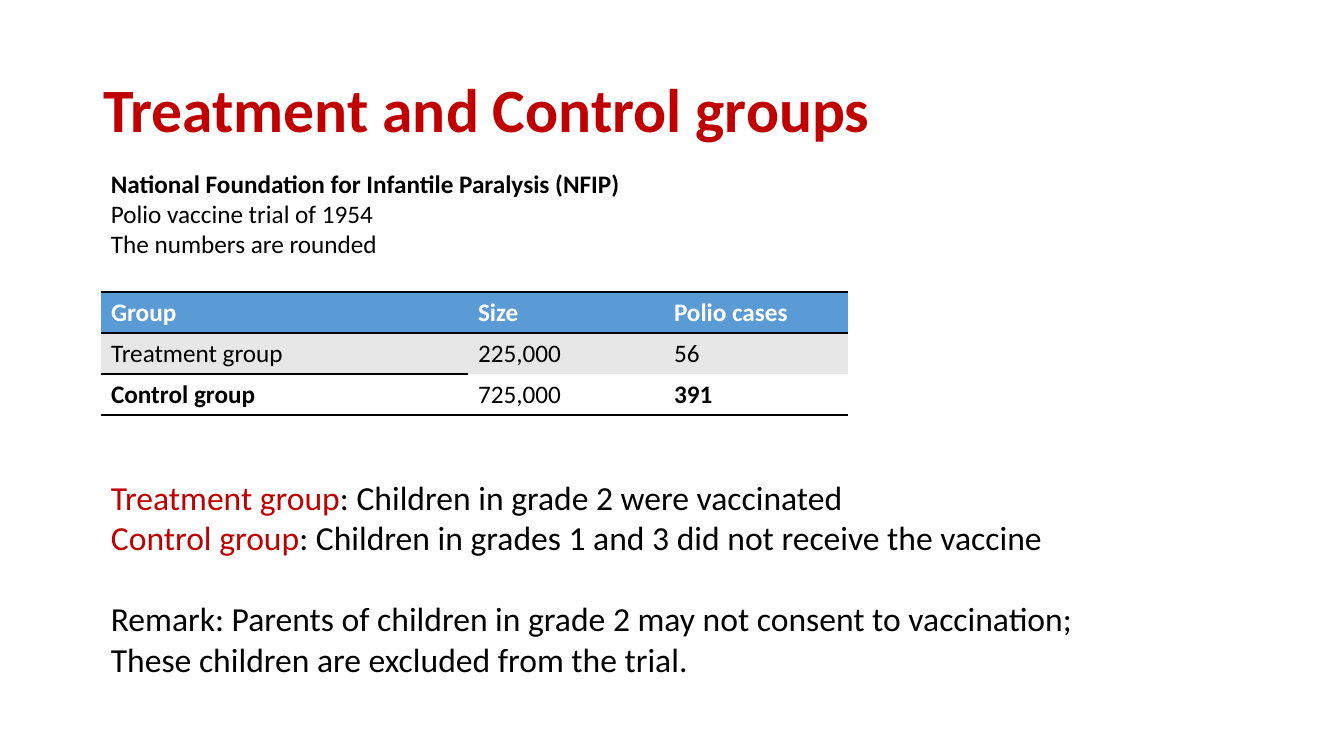
from lxml.etree import SubElement
from pptx import Presentation
from pptx.dml.color import RGBColor
from pptx.enum.text import MSO_ANCHOR, PP_ALIGN
from pptx.oxml.ns import qn
from pptx.util import Emu, Pt

RED = RGBColor(0xC0, 0x00, 0x00)
BLACK = RGBColor(0x00, 0x00, 0x00)
WHITE = RGBColor(0xFF, 0xFF, 0xFF)
BLUE = RGBColor(0x5B, 0x9B, 0xD5)
GREY = RGBColor(0xE7, 0xE7, 0xE7)

EMU_PER_PX = 914400 / 100.8
TITLE_ONLY = 5
LEFT = 101

ROWS = [
    ["Group", "Size", "Polio cases"],
    ["Treatment group", "225,000", "56"],
    ["Control group", "725,000", "391"],
]
ROW_STYLES = [(BLUE, WHITE), (GREY, BLACK), (WHITE, BLACK)]
BOLD_CELLS = {(0, 0), (0, 1), (0, 2), (2, 0), (2, 2)}
# Widths in points of the horizontal rules above, between and below the rows
RULES = [[2, 2, 2], [1, 2, 2], [1, 0, 0], [2, 2, 2]]


def px(length):
    return Emu(round(length * EMU_PER_PX))


def set_borders(cell, top, bottom):
    """Draw black rules above and below a cell; a width of 0 means none."""
    properties = cell._tc.get_or_add_tcPr()
    sides = [("a:lnL", 0), ("a:lnR", 0), ("a:lnT", top), ("a:lnB", bottom)]
    for index, (tag, width) in enumerate(sides):
        line = SubElement(properties, qn(tag), w=str(Pt(width)))
        if width:
            fill = SubElement(line, qn("a:solidFill"))
            SubElement(fill, qn("a:srgbClr"), val=str(BLACK))
        else:
            SubElement(line, qn("a:noFill"))
        properties.insert(index, line)  # borders must precede the fill


class SlideBuilder:
    font_name = "Calibri"

    def __init__(self, presentation):
        layout = presentation.slide_layouts[TITLE_ONLY]
        self.slide = presentation.slides.add_slide(layout)

    def style(self, paragraph, size, color=BLACK, bold=False):
        font = paragraph.font
        font.name, font.size, font.bold = self.font_name, Pt(size), bold
        font.color.rgb = color

    def title(self, text, left, top, width, height):
        shape = self.slide.shapes.title
        shape.left, shape.top = px(left), px(top)
        shape.width, shape.height = px(width), px(height)
        frame = shape.text_frame
        frame.text = text
        frame.vertical_anchor = MSO_ANCHOR.MIDDLE
        paragraph = frame.paragraphs[0]
        paragraph.alignment = PP_ALIGN.LEFT
        paragraph.line_spacing = 0.9
        self.style(paragraph, 44, RED, bold=True)

    def text(self, lines, size, left, top, width, height, wrap=True):
        """Add a text box and return its paragraphs, one per line."""
        box = self.slide.shapes.add_textbox(px(left), px(top), px(width), px(height))
        frame = box.text_frame
        frame.word_wrap = wrap
        frame.text = "\n".join(lines)
        for paragraph in frame.paragraphs:
            self.style(paragraph, size)
        return frame.paragraphs

    def table(self, left, top, column_widths, row_height):
        frame = self.slide.shapes.add_table(
            len(ROWS), len(column_widths), px(left), px(top),
            px(sum(column_widths)), px(row_height * len(ROWS)))
        table = frame.table
        table.horz_banding = False
        for column, width in zip(table.columns, column_widths):
            column.width = px(width)
        for i, (values, (fill, color)) in enumerate(zip(ROWS, ROW_STYLES)):
            table.rows[i].height = px(row_height)
            for j, value in enumerate(values):
                cell = table.cell(i, j)
                cell.text = value
                self.style(cell.text_frame.paragraphs[0], 18, color, (i, j) in BOLD_CELLS)
                cell.fill.solid()
                cell.fill.fore_color.rgb = fill
                set_borders(cell, RULES[i][j], RULES[i + 1][j])


def main():
    presentation = Presentation()
    presentation.slide_width, presentation.slide_height = px(1344), px(756)
    builder = SlideBuilder(presentation)

    builder.title("Treatment and Control groups", 93, 40, 1159, 146)
    builder.table(LEFT, 292, [367, 196, 184], 41)

    study = builder.text([
        "National Foundation for Infantile Paralysis (NFIP)",
        "Polio vaccine trial of 1954",
        "The numbers are rounded",
    ], 18, LEFT, 163, 658, 102)
    study[0].font.bold = True

    notes = builder.text([
        "",
        "",
        "Remark: Parents of children in grade 2 may not consent to vaccination;",
        "These children are excluded from the trial.",
    ], 24, LEFT, 472, 991, 214, wrap=False)
    definitions = [
        ("Treatment group", ": Children in grade 2 were vaccinated"),
        ("Control group", ": Children in grades 1 and 3 did not receive the vaccine"),
    ]
    for paragraph, (term, meaning) in zip(notes, definitions):
        for text, color in ((term, RED), (meaning, BLACK)):
            run = paragraph.add_run()
            run.text = text
            run.font.color.rgb = color
    notes[2].space_before = Pt(29)

    presentation.save("out.pptx")


if __name__ == "__main__":
    main()
